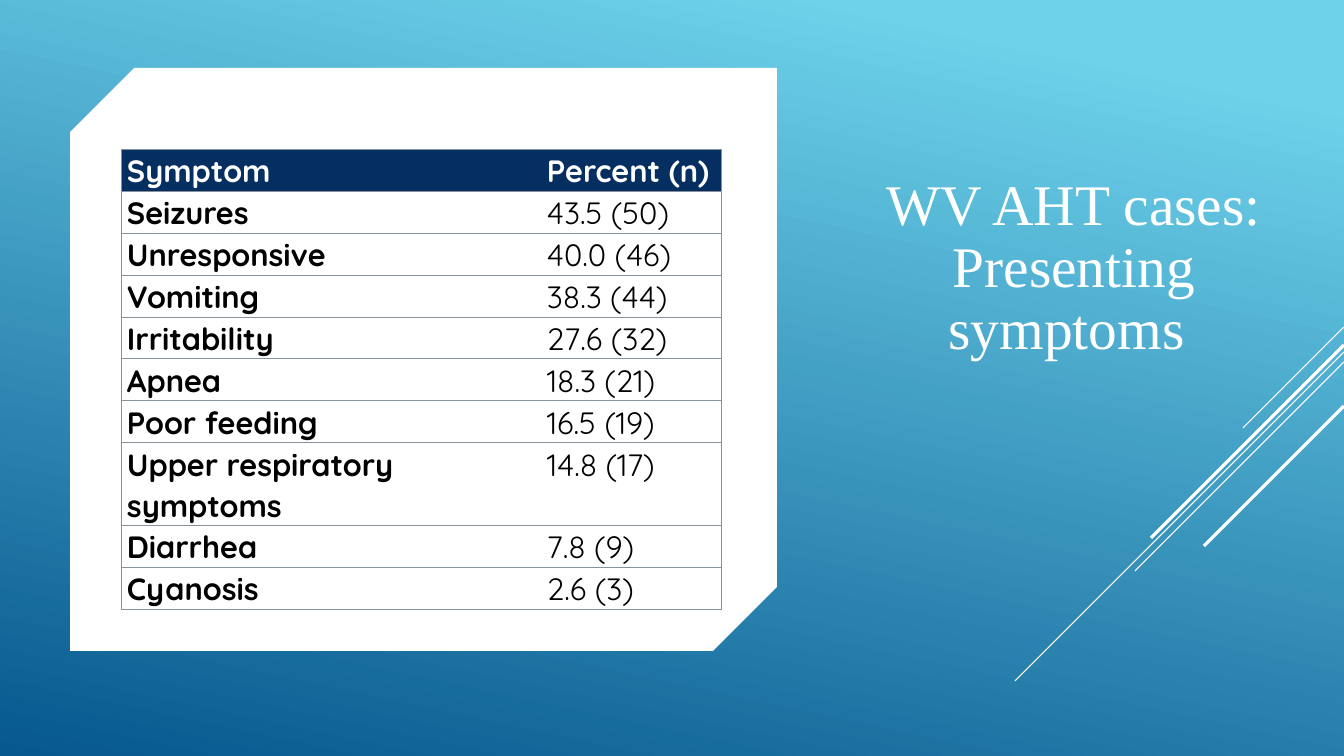
"""Build the slide on presenting symptoms in WV AHT cases."""
from lxml import etree
from pptx import Presentation, util as u
from pptx.dml.color import RGBColor
from pptx.enum import shapes, text
from pptx.oxml import ns

SCALE = 914400 / 100.8
THEME = {
    "sky": "6ED2EB", "deep": "06588E", "navy": "052F61", "rule": "89919C",
    "white": "FFFFFF", "black": "000000",
    "title_font": "Times New Roman", "table_font": "Quicksand",
    "title_size": 41, "table_size": 22, "thin": 0.75, "thick": 2.25,
}
ROWS = [
    ("Symptom", "Percent (n)"),
    ("Seizures", "43.5 (50)"),
    ("Unresponsive", "40.0 (46)"),
    ("Vomiting", "38.3 (44)"),
    ("Irritability", "27.6 (32)"),
    ("Apnea", "18.3 (21)"),
    ("Poor feeding", "16.5 (19)"),
    ("Upper respiratory symptoms", "14.8 (17)"),
    ("Diarrhea", "7.8 (9)"),
    ("Cyanosis", "2.6 (3)"),
]
STREAKS = [(327, 101, "thin"), (352, 329, "thin"), (362, 209, "thin"),
           (345, 193, "thick"), (406, 140, "thick")]


def px(*lengths):
    return [u.Emu(round(length * SCALE)) for length in lengths]


def write(frame, words, spacing, color, **font):
    para = frame.paragraphs[0]
    para.line_spacing = spacing
    span = para.add_run()
    span.text = words
    for name, value in font.items():
        setattr(span.font, name, value)
    span.font.color.rgb = RGBColor.from_string(THEME[color])
    return para


deck = Presentation()
deck.slide_width, deck.slide_height = px(1344, 756)
page = deck.slides.add_slide(deck.slide_layouts[5])

backdrop = page.shapes.add_shape(shapes.MSO_SHAPE.RECTANGLE, *px(0, 0, 1344, 756))
backdrop.fill.gradient()
backdrop.fill.gradient_angle = 360 - 102
for stop, position, color in zip(backdrop.fill.gradient_stops, (0.1, 1), ("sky", "deep")):
    stop.position = position
    stop.color.rgb = RGBColor.from_string(THEME[color])
page.shapes._spTree.insert(2, backdrop._element)

title = page.shapes.title
title.left, title.top, title.width, title.height = px(824, 105, 500, 262)
frame_format = {"word_wrap": True, "auto_size": text.MSO_AUTO_SIZE.NONE,
                "vertical_anchor": text.MSO_ANCHOR.BOTTOM}
for name, value in frame_format.items():
    setattr(title.text_frame, name, value)
heading = write(title.text_frame, "WV AHT cases: Presenting symptoms ", 0.9, "white",
                name=THEME["title_font"], size=u.Pt(THEME["title_size"]), bold=False)
heading.alignment = text.PP_ALIGN.CENTER

card = page.shapes.add_shape(shapes.MSO_SHAPE.SNIP_2_DIAG_RECTANGLE, *px(70, 68, 707, 583))
card.adjustments[0], card.adjustments[1] = 0.11, 0
card.fill.solid()
card.fill.fore_color.rgb = RGBColor.from_string(THEME["white"])
for shape in (backdrop, card):
    shape.shadow.inherit = False
    shape.line.fill.background()

for top, reach, weight in STREAKS:
    streak = page.shapes.add_connector(
        shapes.MSO_CONNECTOR.STRAIGHT, *px(1344, top, 1344 - reach, top + reach))
    streak.line.color.rgb = RGBColor.from_string(THEME["white"])
    streak.line.width = u.Pt(THEME[weight])
    etree.SubElement(streak._element.spPr, ns.qn("a:effectLst"))

holder = page.shapes.add_table(len(ROWS), 2, *px(121, 149, 601, 420))
table = holder.table
table.horz_banding = False
for column, width in zip(table.columns, px(420, 181)):
    column.width = width
for row_index, row in enumerate(ROWS):
    table.rows[row_index].height = px(42)[0]
    header = row_index == 0
    for column_index, words in enumerate(row):
        cell = table.cell(row_index, column_index)
        for side, margin in zip(("left", "top", "right", "bottom"), px(6, 0, 6, 0)):
            setattr(cell, f"margin_{side}", margin)
        write(cell.text_frame, words, 1.07, "white" if header else "black",
              name=THEME["table_font"], size=u.Pt(THEME["table_size"]),
              bold=header or column_index == 0)
        outer = "L" if column_index == 0 else "R"
        properties = cell._tc.get_or_add_tcPr()
        for side in "LRTB":
            edge = etree.SubElement(properties, ns.qn(f"a:ln{side}"),
                                    w=str(u.Pt(THEME["thin"])))
            if side in (outer, "T", "B"):
                paint = etree.SubElement(edge, ns.qn("a:solidFill"))
                etree.SubElement(paint, ns.qn("a:srgbClr"), val=THEME["rule"])
            else:
                etree.SubElement(edge, ns.qn("a:noFill"))
        if header:
            cell.fill.solid()
            cell.fill.fore_color.rgb = RGBColor.from_string(THEME["navy"])
        else:
            cell.fill.background()

deck.save("out.pptx")
